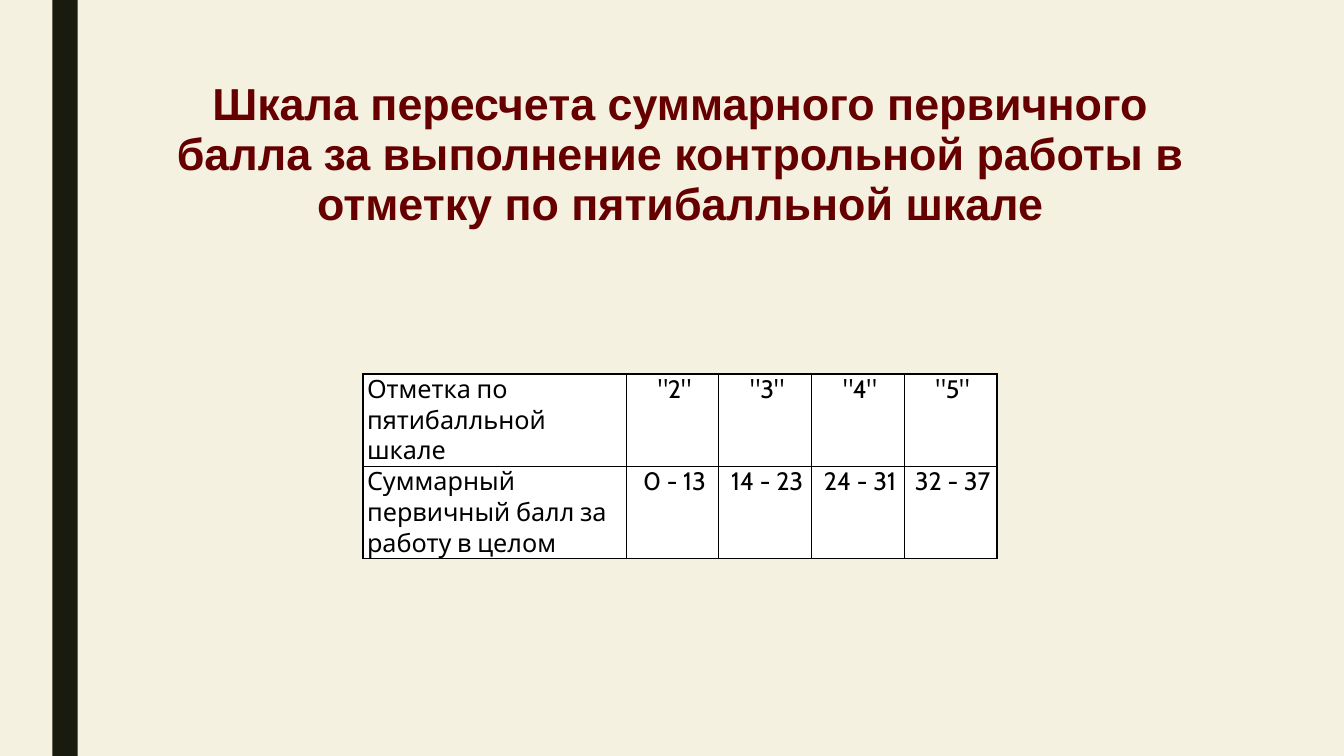
from lxml import etree
from pptx import Presentation
from pptx.dml.color import RGBColor
from pptx.enum import shapes, text
from pptx.oxml import ns
from pptx.util import Inches, Pt

TITLE = ("Шкала пересчета суммарного первичного балла за выполнение "
         "контрольной работы в отметку по пятибалльной шкале")
GRADES = [
    ["Отметка по пятибалльной шкале", '"2"', '"3"', '"4"', '"5"'],
    ["Суммарный первичный балл за работу в целом",
     "0 - 13", "14 - 23", "24 - 31", "32 - 37"],
]


def paint(color_format, color):
    color_format.rgb = RGBColor.from_string(color)


def fill(obj, color):
    obj.fill.solid()
    paint(obj.fill.fore_color, color)


def add_side_bar(s, x, y, w, h):
    sp = s.shapes.add_shape(shapes.MSO_SHAPE.RECTANGLE,
                            Inches(x), Inches(y), Inches(w), Inches(h))
    sp.shadow.inherit = False
    sp.line.fill.background()
    fill(sp, "191B0E")


def set_title(s, x, y, w, h):
    sp = s.shapes.title
    sp.left, sp.top, sp.width, sp.height = map(Inches, (x, y, w, h))
    tf = sp.text_frame
    tf.text = TITLE
    tf.word_wrap = True
    tf.auto_size = text.MSO_AUTO_SIZE.NONE
    tf.vertical_anchor = text.MSO_ANCHOR.TOP
    p = tf.paragraphs[0]
    p.alignment = text.PP_ALIGN.CENTER
    p.line_spacing = 0.93
    p.font.name, p.font.size, p.font.bold = "Arial", Pt(32), True
    paint(p.font.color, "660000")


def add_borders(cell, color, width):
    """Put the four border lines ahead of the cell's fill, as the schema asks."""
    tc_pr = cell._tc.get_or_add_tcPr()
    for i, side in enumerate(("lnL", "lnR", "lnT", "lnB")):
        ln = etree.Element(ns.qn(f"a:{side}"), w=str(Pt(width)))
        solid = etree.SubElement(ln, ns.qn("a:solidFill"))
        etree.SubElement(solid, ns.qn("a:srgbClr"), val=color)
        tc_pr.insert(i, ln)


def format_cell(cell, value, centred):
    cell.text = value
    cell.margin_left = cell.margin_right = cell.margin_top = cell.margin_bottom = 0
    fill(cell, "FFFFFF")
    add_borders(cell, "000000", 1)
    p = cell.text_frame.paragraphs[0]
    p.alignment = text.PP_ALIGN.CENTER if centred else text.PP_ALIGN.LEFT
    p.space_before = p.space_after = Pt(5)
    p._p.get_or_add_pPr().set("marL", str(Inches(0.04)))
    p.font.name, p.font.size, p.font.bold = "Cabin", Pt(18), False
    paint(p.font.color, "000000")


def add_grade_table(s, x, y, w, h, label_w=2.61):
    n_rows, n_cols = len(GRADES), len(GRADES[0])
    table = s.shapes.add_table(n_rows, n_cols, Inches(x), Inches(y),
                               Inches(w), Inches(h)).table
    table.first_row = table.horz_banding = False
    for c, column in enumerate(table.columns):
        column.width = Inches((w - label_w) / (n_cols - 1) if c else label_w)
    for r, values in enumerate(GRADES):
        table.rows[r].height = Inches(h / n_rows)
        for c, value in enumerate(values):
            format_cell(table.cell(r, c), value, centred=c > 0)


def main():
    prs = Presentation()
    prs.slide_width, prs.slide_height = Inches(13.33), Inches(7.5)
    s = prs.slides.add_slide(prs.slide_layouts[5])
    fill(s.background, "F4F1E1")
    add_side_bar(s, 0.52, 0, 0.25, 7.5)
    set_title(s, 1.5, 0.75, 10.5, 1.62)
    add_grade_table(s, 3.6, 3.71, 6.29, 1.83)
    prs.save("out.pptx")


if __name__ == "__main__":
    main()
